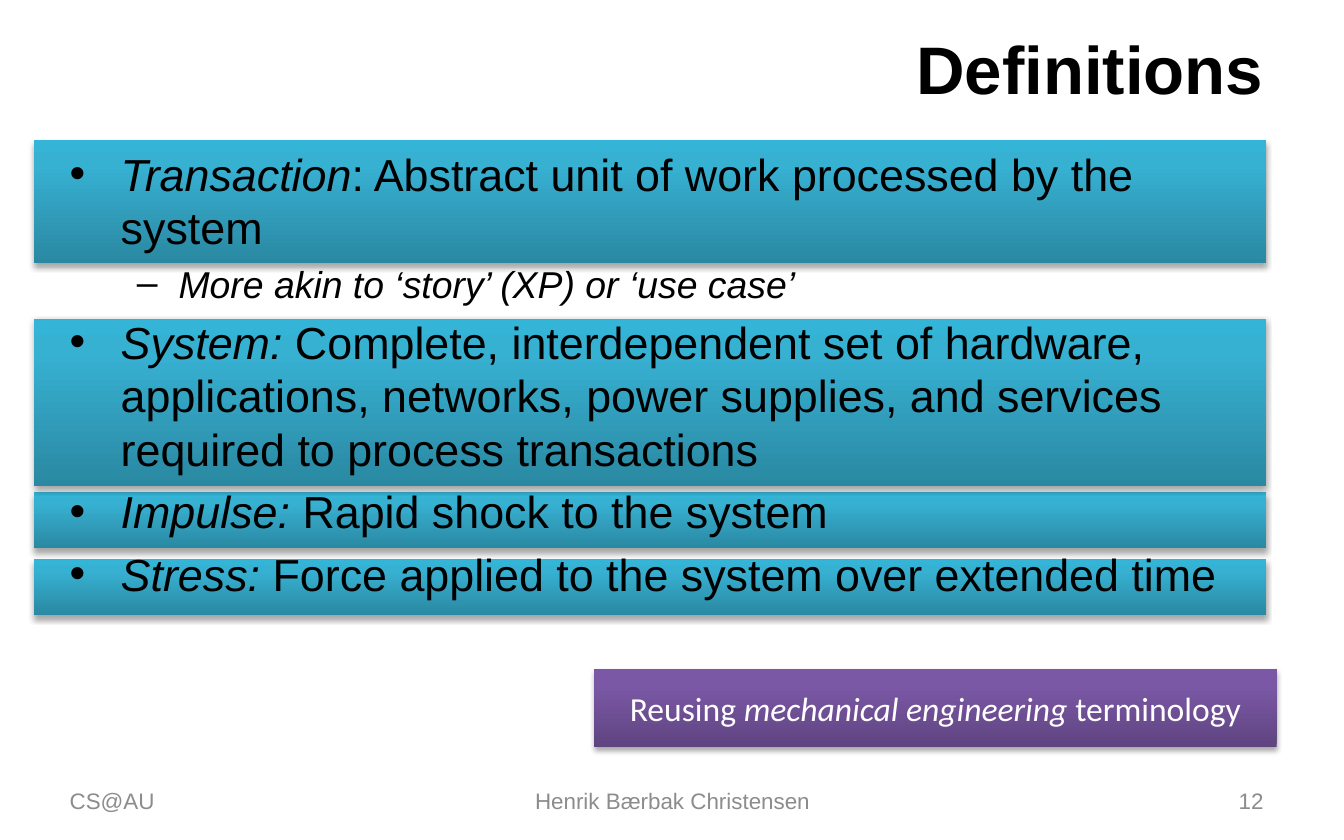
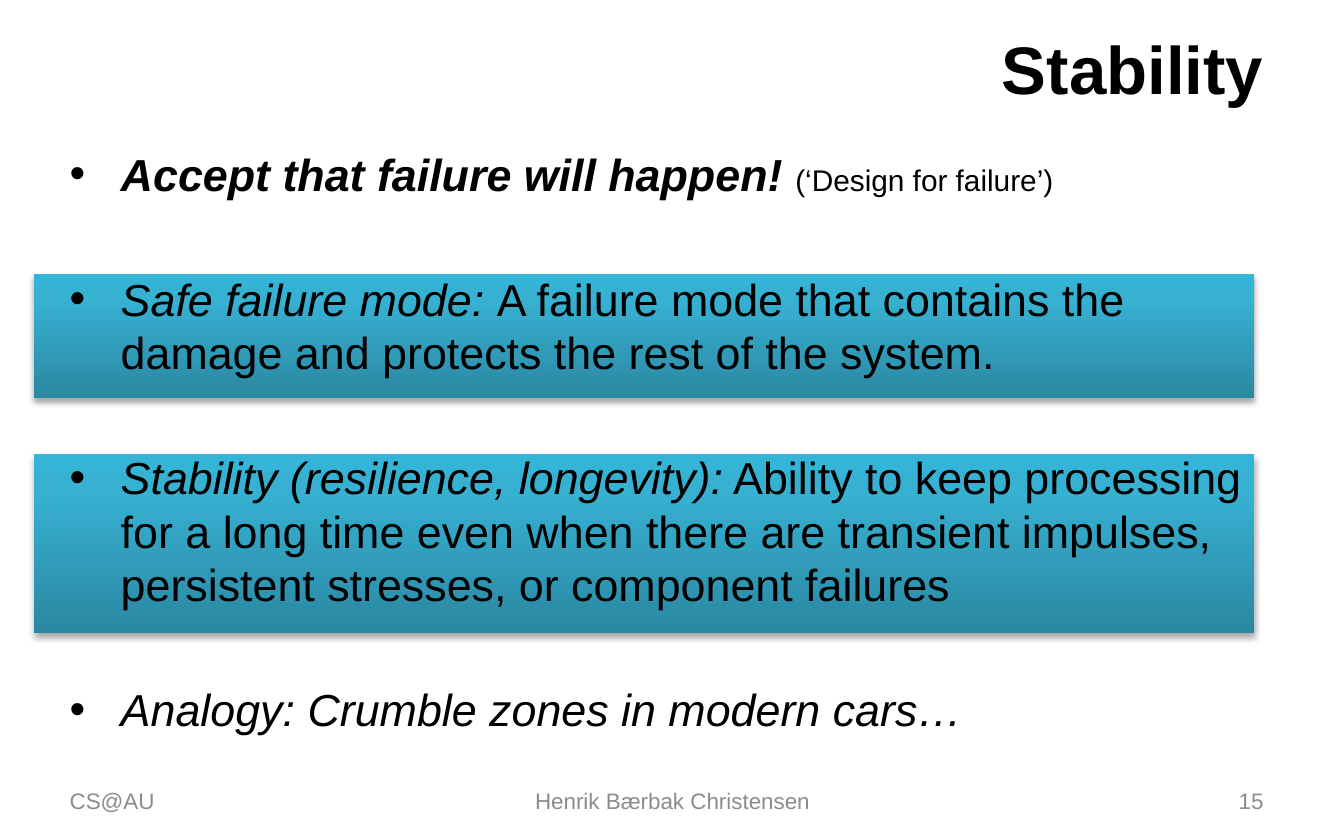
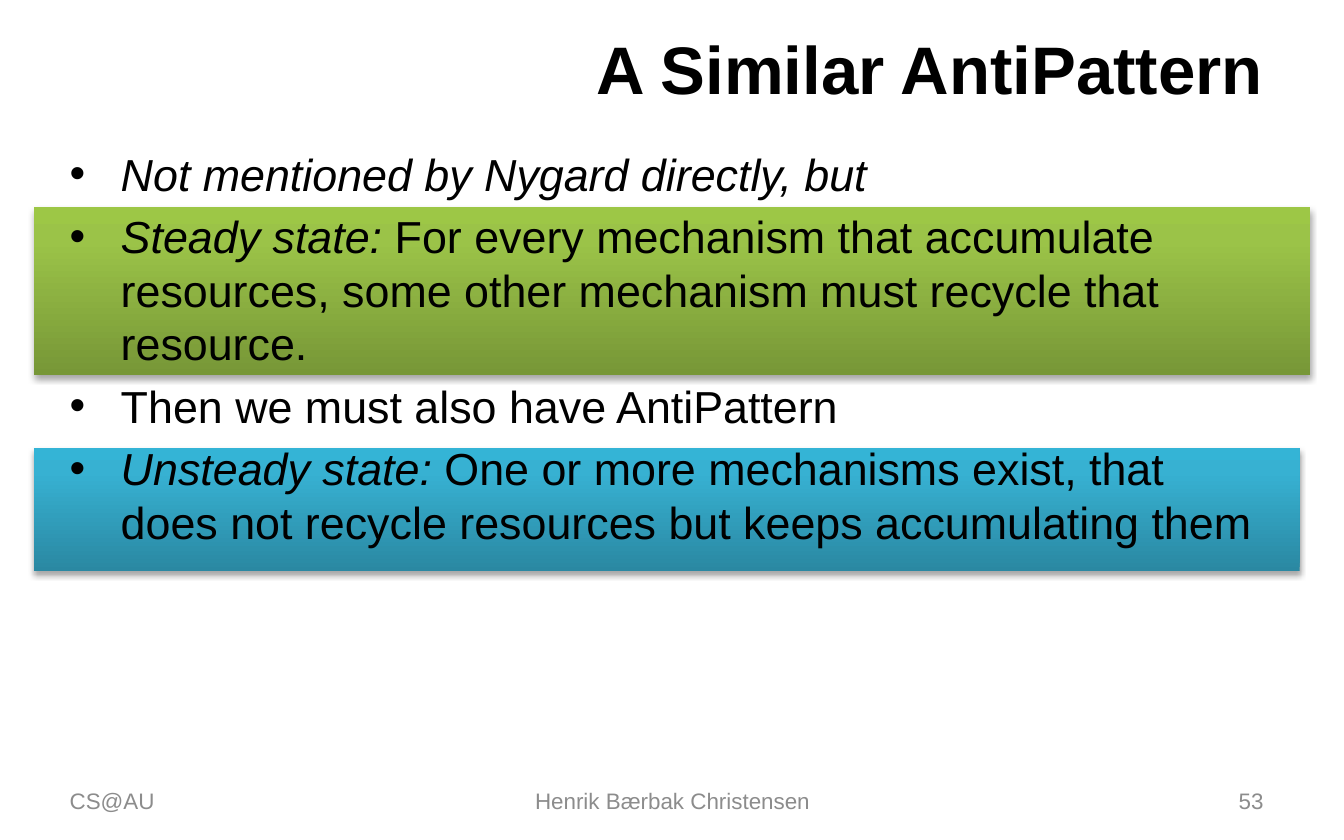
"""Build three lecture slides on stability terms, with highlighted definitions."""
from lxml import etree
from pptx import Presentation
from pptx import util as u
from pptx.dml.color import RGBColor
from pptx.enum import shapes, text
from pptx.oxml import ns

BLACK = RGBColor(0x00, 0x00, 0x00)
WHITE = RGBColor(0xFF, 0xFF, 0xFF)
GREY = RGBColor(0x8C, 0x8C, 0x8C)
BLUE = [RGBColor(0x2A, 0x88, 0xA2), RGBColor(0x37, 0xB1, 0xD2), RGBColor(0x34, 0xB4, 0xD6)]
GREEN = [RGBColor(0x77, 0x97, 0x37), RGBColor(0x9B, 0xC3, 0x48), RGBColor(0x9D, 0xC7, 0x46)]
PURPLE = [RGBColor(0x5F, 0x44, 0x80), RGBColor(0x7B, 0x58, 0xA6), RGBColor(0x7C, 0x57, 0xA8)]
STOPS = [0, 80000, 100000]
LEFT, CENTER, RIGHT = text.PP_ALIGN.LEFT, text.PP_ALIGN.CENTER, text.PP_ALIGN.RIGHT
LINE_PITCH = 1.195
TIGHT, WIDE = 0.2, 1.595
LEVELS = [(24, "•", 0.38, -0.38), (20, "–", 0.81, -0.31)]
FOOTERS = [(0.42, 2.33, LEFT), (3.42, 3.17, CENTER), (7.17, 2.33, RIGHT)]

SLIDES = [
    ("Definitions", "12",
     [(0.25, 4.16, 9.17, 0.42, BLUE), (0.25, 3.66, 9.17, 0.42, BLUE),
      (0.25, 2.37, 9.17, 1.25, BLUE), (0.25, 1.04, 9.17, 0.92, BLUE)],
     TIGHT,
     [(0, "*Transaction*: Abstract unit of work processed by the system"),
      (1, "*More akin to ‘story’ (XP) or ‘use case’*"),
      (0, "*System: *Complete, interdependent set of hardware, applications, networks, "
          "power supplies, and services required to process transactions"),
      (0, "*Impulse: *Rapid shock to the system"),
      (0, "*Stress: *Force applied to the system over extended time")]),
    ("Stability", "15",
     [(0.25, 2.04, 9.08, 0.92, BLUE), (0.25, 3.38, 9.08, 1.33, BLUE)],
     WIDE,
     [(0, "*Accept that failure will happen! *(‘Design for failure’)"),
      (0, "*Safe failure mode: *A failure mode that contains the damage and protects "
          "the rest of the system."),
      (0, "*Stability (resilience, longevity):* Ability to keep processing for a long time "
          "even when there are transient impulses, persistent stresses, or component failures"),
      (0, "*Analogy: Crumble zones in modern cars…*")]),
    ("A Similar AntiPattern", "53",
     [(0.25, 3.33, 9.42, 0.92, BLUE), (0.25, 1.54, 9.5, 1.25, GREEN)],
     TIGHT,
     [(0, "*Not mentioned by Nygard directly, but*"),
      (0, "*Steady state: *For every mechanism that accumulate resources, "
          "some other mechanism must recycle that resource."),
      (0, "Then we must also have AntiPattern"),
      (0, "*Unsteady state: *One or more mechanisms exist, that does not recycle "
          "resources but keeps accumulating them")]),
]


def add_band(slide, left, top, width, height, colours):
    """Add a shadowed rectangle that runs from dark at the bottom to light at the top."""
    band = slide.shapes.add_shape(shapes.MSO_SHAPE.RECTANGLE, u.Inches(left), u.Inches(top),
                                  u.Inches(width), u.Inches(height))
    band.line.fill.background()
    band.fill.gradient()
    band.fill.gradient_angle = 90
    stops = band._element.spPr.find(".//" + ns.qn("a:gsLst"))
    for old_stop in list(stops):
        stops.remove(old_stop)
    for position, colour in zip(STOPS, colours):
        stop = etree.SubElement(stops, ns.qn("a:gs"), pos=str(position))
        etree.SubElement(stop, ns.qn("a:srgbClr"), val=str(colour))
    band.shadow.inherit = False
    effects = band._element.spPr.find(ns.qn("a:effectLst"))
    shadow = etree.SubElement(effects, ns.qn("a:outerShdw"), blurRad="40000", dist="23000",
                              dir="5400000", rotWithShape="0")
    shade = etree.SubElement(shadow, ns.qn("a:srgbClr"), val=str(BLACK))
    etree.SubElement(shade, ns.qn("a:alpha"), val="35000")
    return band


def write_runs(paragraph, marked, size, font, colour):
    """Write text whose parts between asterisks are italic."""
    for index, part in enumerate(marked.split("*")):
        if part:
            run = paragraph.add_run()
            run.text = part
            run.font.size = u.Pt(size)
            run.font.name = font
            run.font.italic = index % 2 == 1
            run.font.color.rgb = colour


prs = Presentation()
prs.slide_width, prs.slide_height = u.Inches(10), u.Inches(6.25)
bodies = []

for heading, number, bands, gap, points in SLIDES:
    slide = prs.slides.add_slide(prs.slide_layouts[5])
    for band in bands:
        add_band(slide, *band)

    title = slide.shapes.title
    title.left, title.top = u.Inches(0.5), u.Inches(0.18)
    title.width, title.height = u.Inches(9), u.Inches(0.65)
    title.text_frame.text = heading
    title.text_frame.vertical_anchor = text.MSO_ANCHOR.MIDDLE
    title_line = title.text_frame.paragraphs[0]
    title_line.alignment = RIGHT
    title_font = title_line.runs[0].font
    title_font.size, title_font.name, title_font.bold = u.Pt(36), "Arial", True
    title_font.color.rgb = BLACK

    body = slide.shapes.add_textbox(u.Inches(0.42), u.Inches(1.04),
                                    u.Inches(9.08), u.Inches(4.72)).text_frame
    body.word_wrap = True
    bodies.append(body)
    for index, (level, words) in enumerate(points):
        size, bullet, margin, indent = LEVELS[level]
        point = body.add_paragraph() if index else body.paragraphs[0]
        properties = point._p.get_or_add_pPr()
        properties.set("marL", str(u.Inches(margin)))
        properties.set("indent", str(u.Inches(indent)))
        etree.SubElement(properties, ns.qn("a:buFont"), typeface="Arial")
        etree.SubElement(properties, ns.qn("a:buChar"), char=bullet)
        point.level = level
        point.line_spacing = u.Pt(round(size * LINE_PITCH, 1))
        point.space_before = u.Pt(round(size * gap, 1) if index else 0)
        write_runs(point, words, size, "Arial", BLACK)

    for (left, width, alignment), words in zip(
            FOOTERS, ["CS@AU", "Henrik Bærbak Christensen", number]):
        footer = slide.shapes.add_textbox(u.Inches(left), u.Inches(5.79),
                                          u.Inches(width), u.Inches(0.33)).text_frame
        footer.word_wrap = True
        footer.vertical_anchor = text.MSO_ANCHOR.MIDDLE
        footer.paragraphs[0].alignment = alignment
        write_runs(footer.paragraphs[0], words, 12, "Arial", GREY)

terminology = add_band(prs.slides[0], 4.42, 4.98, 5.08, 0.58, PURPLE).text_frame
terminology.vertical_anchor = text.MSO_ANCHOR.MIDDLE
terminology.paragraphs[0].alignment = CENTER
write_runs(terminology.paragraphs[0], "Reusing *mechanical engineering* terminology",
           18, "Calibri", WHITE)

motto, aside = bodies[1].paragraphs[0].runs
motto.font.bold = True
aside.font.size = u.Pt(16)

prs.save("out.pptx")
